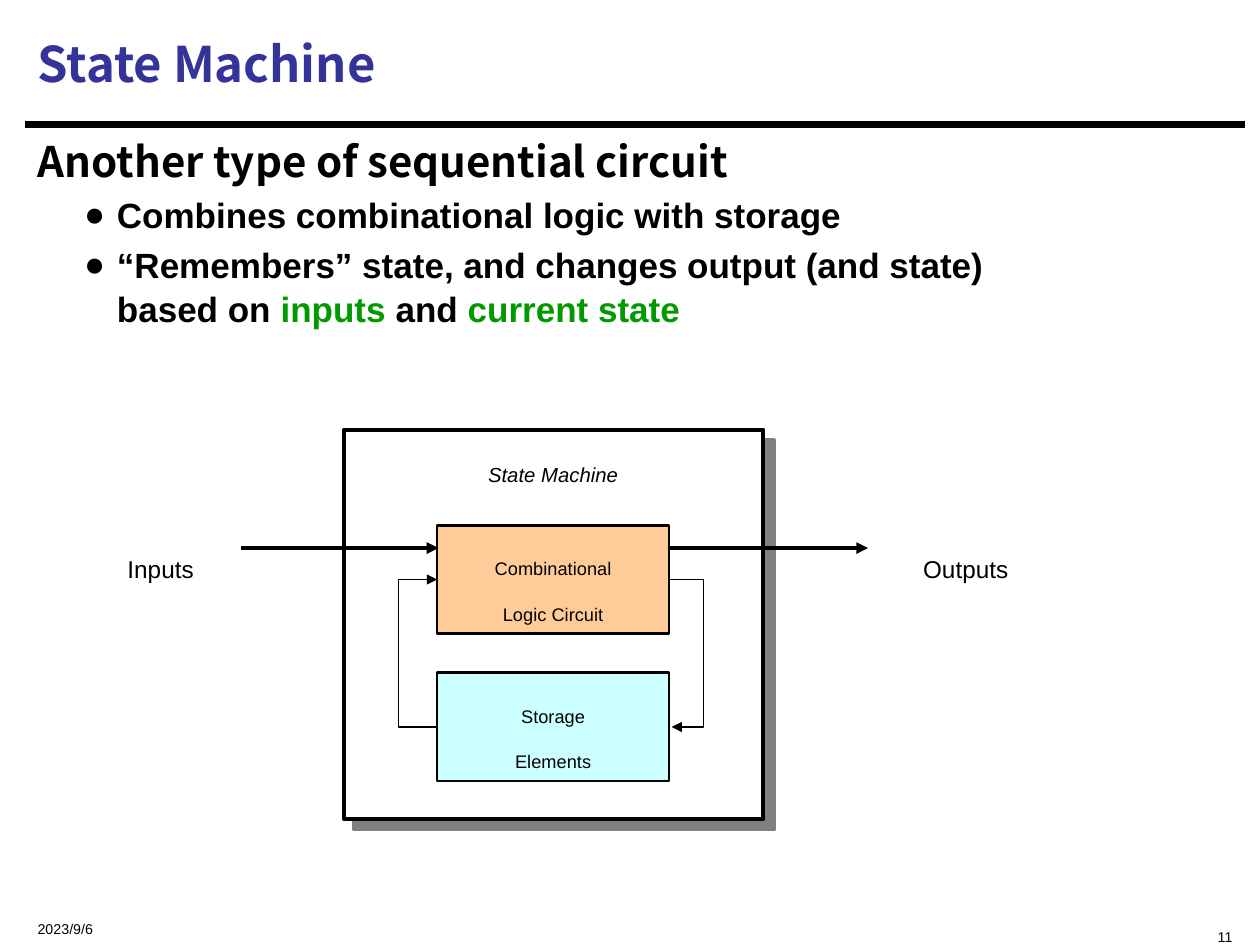
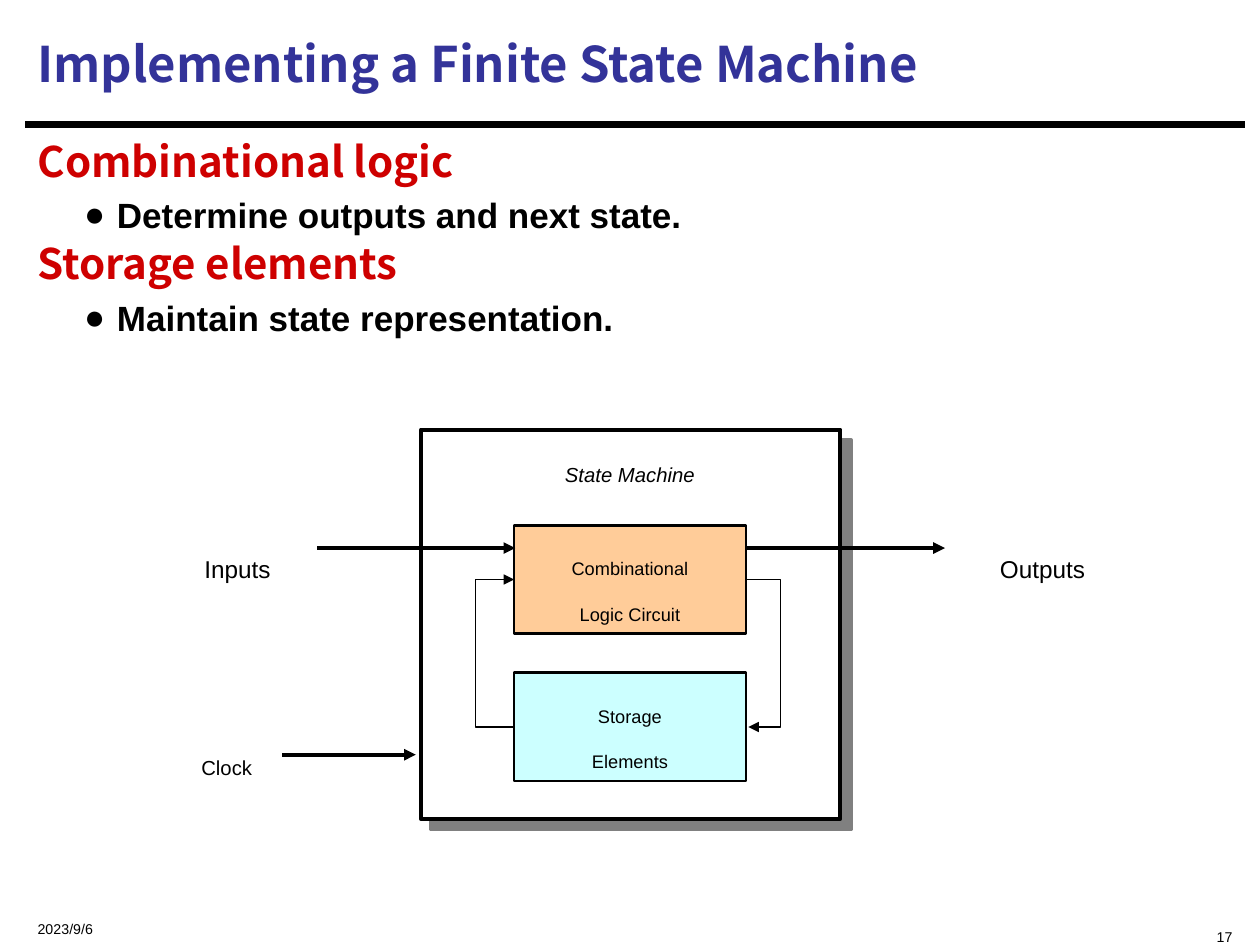
from lxml import etree
from pptx import Presentation
from pptx.dml.color import RGBColor
from pptx.enum.shapes import MSO_CONNECTOR, MSO_SHAPE
from pptx.enum.text import MSO_ANCHOR, MSO_AUTO_SIZE, PP_ALIGN
from pptx.oxml.ns import qn
from pptx.util import Inches, Pt

STRAIGHT, ELBOW = MSO_CONNECTOR.STRAIGHT, MSO_CONNECTOR.ELBOW
RECTANGLE = MSO_SHAPE.RECTANGLE
TOP, MIDDLE = MSO_ANCHOR.TOP, MSO_ANCHOR.MIDDLE
LEFT, CENTER, RIGHT = PP_ALIGN.LEFT, PP_ALIGN.CENTER, PP_ALIGN.RIGHT
GROW = MSO_AUTO_SIZE.SHAPE_TO_FIT_TEXT

COLORS = {
    "black": "000000", "white": "FFFFFF", "title": "333399",
    "green": "009900", "red": "CE0000", "shadow": "808080",
    "logic": "FFCC99", "storage": "CCFFFF",
}
HEADING_FONT, TEXT_FONT = "Noto Sans CJK SC", "Arial"
TITLE = {"name": HEADING_FONT, "size": Pt(28), "bold": True}
HEADING = {"name": HEADING_FONT, "size": Pt(24), "bold": True}
BULLET = {"name": TEXT_FONT, "size": Pt(20), "bold": True}
FOOTER = {"name": TEXT_FONT, "size": Pt(14)}
FRAME_LABEL = {"name": TEXT_FONT, "size": Pt(20), "italic": True}
BLOCK_LABEL = {"name": TEXT_FONT, "size": Pt(18)}
SIGNAL_LABEL = {"name": TEXT_FONT, "size": Pt(24)}
CLOCK_LABEL = {"name": TEXT_FONT, "size": Pt(20)}

HEADING_SPACING = {"line_spacing": 0.9, "space_before": Pt(4.5)}
BULLET_SPACING = {"line_spacing": 1.05, "space_before": Pt(3)}
LOWERED = "-33000"  # subscript offset of footer and diagram labels
BLOCK_WIDTH, BLOCK_HEIGHT = 1.84, 0.86


def rgb(color):
    return RGBColor.from_string(COLORS[color])


def set_attributes(target, values):
    for name, value in values.items():
        setattr(target, name, value)


def add_run(paragraph, text, style, color="black", lowered=False):
    run = paragraph.add_run()
    run.text = text
    set_attributes(run.font, style)
    run.font.color.rgb = rgb(color)
    if lowered:
        run._r.get_or_add_rPr().set("baseline", LOWERED)


def write_lines(shape, lines, style, color="black", align=CENTER, lowered=True):
    frame = shape.text_frame
    for index, line in enumerate(lines):
        paragraph = frame.add_paragraph() if index else frame.paragraphs[0]
        paragraph.alignment = align
        add_run(paragraph, line, style, color, lowered)


def add_text_box(slide, box, **frame_values):
    shape = slide.shapes.add_textbox(*map(Inches, box))
    set_attributes(shape.text_frame, {"word_wrap": True, **frame_values})
    return shape


def add_label(slide, box, text, style):
    shape = add_text_box(slide, box, word_wrap=False, auto_size=GROW)
    write_lines(shape, [text], style)


def add_rectangle(slide, box, fill, line_width):
    shape = slide.shapes.add_shape(RECTANGLE, *map(Inches, box))
    shape.shadow.inherit = False
    shape.fill.solid()
    shape.fill.fore_color.rgb = rgb(fill)
    shape.line.color.rgb = rgb("black")
    shape.line.width = Pt(line_width)
    return shape


def add_line(slide, start, end, width, kind=STRAIGHT, arrow=True):
    connector = slide.shapes.add_connector(kind, *map(Inches, (*start, *end)))
    connector.line.color.rgb = rgb("black")
    connector.line.width = Pt(width)
    properties = connector._element.spPr
    etree.SubElement(properties, qn("a:effectLst"))
    if arrow:
        etree.SubElement(properties.find(qn("a:ln")), qn("a:tailEnd"), type="triangle")
    return connector


def add_feedback(slide, start, end, reach):
    """Elbow arrow whose middle leg lies reach inches from its start."""
    connector = add_line(slide, start, end, 0.75, ELBOW)
    geometry = connector._element.spPr.find(qn("a:prstGeom"))
    adjustments = geometry.find(qn("a:avLst"))
    if adjustments is None:
        adjustments = etree.SubElement(geometry, qn("a:avLst"))
    ratio = round(reach / (end[0] - start[0]) * 100000)
    etree.SubElement(adjustments, qn("a:gd"), name="adj1", fmla=f"val {ratio}")


def add_drop_shadow(shape):
    effects = shape._element.spPr.find(qn("a:effectLst"))
    shadow = etree.SubElement(effects, qn("a:outerShdw"), dist=str(Pt(8.5)),
                              dir="2700000", algn="ctr", rotWithShape="0")
    etree.SubElement(shadow, qn("a:srgbClr"), val=COLORS["shadow"])


def add_bullet_mark(paragraph):
    properties = paragraph._p.get_or_add_pPr()
    properties.set("marL", str(Inches(0.63)))
    properties.set("indent", str(Inches(-0.26)))
    etree.SubElement(properties, qn("a:buFont"), typeface=TEXT_FONT)
    etree.SubElement(properties, qn("a:buChar"), char="●")


def add_slide_base(presentation, title, number):
    """Blank slide with rule, footer and title."""
    slide = presentation.slides.add_slide(presentation.slide_layouts[6])
    add_line(slide, (0.2, 0.99), (9.88, 0.99), 3.75, arrow=False)
    footers = [((0.2, 7.17, 2.5, 0.25), "2023/9/6", MIDDLE, LEFT),
               ((6.88, 7.17, 3, 0.25), number, TOP, RIGHT)]
    for box, text, anchor, align in footers:
        shape = add_text_box(slide, box, vertical_anchor=anchor)
        write_lines(shape, [text], FOOTER, align=align)
    shape = add_text_box(slide, (0.2, 0.08, 9.67, 0.84), vertical_anchor=MIDDLE)
    write_lines(shape, [title], TITLE, "title", LEFT, lowered=False)
    return slide


def add_body(slide, box, content):
    """Headings and bullets; each entry is (is_bullet, [(text, color), ...])."""
    frame = add_text_box(slide, box).text_frame
    for index, (is_bullet, runs) in enumerate(content):
        paragraph = frame.add_paragraph() if index else frame.paragraphs[0]
        set_attributes(paragraph, BULLET_SPACING if is_bullet else HEADING_SPACING)
        if not index:
            paragraph.space_before = Pt(0)
        if is_bullet:
            paragraph.level = 1
            add_bullet_mark(paragraph)
        for text, color in runs:
            for line_index, line in enumerate(text.split("\n")):
                if line_index:
                    paragraph.add_line_break()
                add_run(paragraph, line, BULLET if is_bullet else HEADING, color)


def add_state_machine(slide, left, top, with_clock=False):
    """Diagram placed from the top left corner of its outer frame."""
    def box(x, y, width, height):
        return left + x, top + y, width, height

    def point(x, y):
        return left + x, top + y

    # Outer frame
    add_drop_shadow(add_rectangle(slide, box(0, 0, 3.33, 3.09), "white", 2.25))
    add_label(slide, box(0.67, 0, 1.98, 0.43), "State Machine", FRAME_LABEL)

    # Inner blocks
    blocks = [(0.76, "logic", ["Combinational", "Logic Circuit"]),
              (1.93, "storage", ["Storage", "Elements"])]
    for y, fill, lines in blocks:
        block = add_rectangle(slide, box(0.74, y, BLOCK_WIDTH, BLOCK_HEIGHT), fill, 1.5)
        set_attributes(block.text_frame, {"word_wrap": False, "vertical_anchor": MIDDLE})
        write_lines(block, lines, BLOCK_LABEL)
    logic_y, storage_y = (y + BLOCK_HEIGHT / 2 for y, _, _ in blocks)

    # Signals: label box, label, style, arrow start, arrow end, arrow height
    signals = [((-2.01, 0.69, 1.11, 0.5), "Inputs", SIGNAL_LABEL, -0.82, 0.75, 0.94),
               ((4.25, 0.69, 1.37, 0.5), "Outputs", SIGNAL_LABEL, 2.59, 4.16, 0.94)]
    if with_clock:
        signals.append(((-1.99, 2.33, 0.9, 0.43), "Clock", CLOCK_LABEL, -1.1, -0.04, 2.58))
    for label_box, text, style, start, end, y in signals:
        add_label(slide, box(*label_box), text, style)
        add_line(slide, point(start, y), point(end, y), 2.25)

    # Feedback loop
    add_feedback(slide, point(2.59, logic_y), point(2.6, storage_y), 0.27)
    add_feedback(slide, point(0.73, storage_y), point(0.74, logic_y), -0.3)


def main():
    presentation = Presentation()
    presentation.slide_width, presentation.slide_height = Inches(10), Inches(7.5)
    body_box = (0.2, 1.07, 9.67, 5.99)

    slide = add_slide_base(presentation, "State Machine", "11")
    add_body(slide, body_box, [
        (False, [("Another type of sequential circuit", "black")]),
        (True, [("Combines combinational logic with storage", "black")]),
        (True, [("“Remembers” state, and changes output (and state) \nbased on ", "black"),
                ("inputs", "green"), (" and ", "black"), ("current state", "green")]),
    ])
    add_state_machine(slide, 2.73, 3.41)

    slide = add_slide_base(presentation, "Implementing a Finite State Machine", "17")
    add_body(slide, body_box, [
        (False, [("Combinational logic", "red")]),
        (True, [("Determine outputs and next state.", "black")]),
        (False, [("Storage elements", "red")]),
        (True, [("Maintain state representation.", "black")]),
    ])
    add_state_machine(slide, 3.34, 3.41, with_clock=True)

    presentation.save("out.pptx")


if __name__ == "__main__":
    main()
